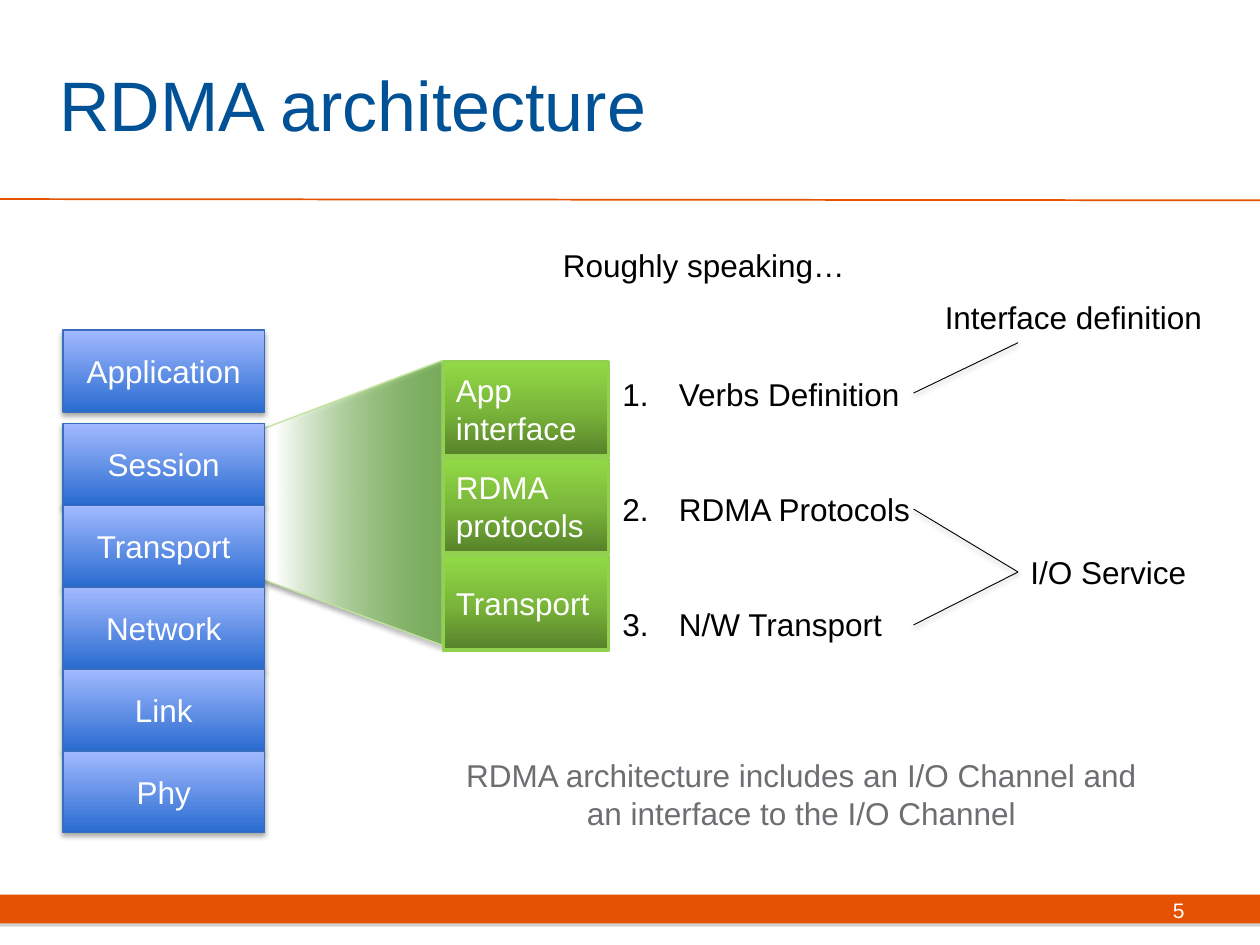
"""Build the RDMA architecture slide."""
from lxml.etree import SubElement
from pptx import Presentation
from pptx.dml.color import RGBColor
from pptx.enum.shapes import MSO_CONNECTOR, MSO_SHAPE
from pptx.enum.text import MSO_ANCHOR, PP_ALIGN
from pptx.oxml.ns import qn
from pptx.util import Inches, Pt

ORANGE = RGBColor(0xE5, 0x53, 0x02)
NAVY = RGBColor(0x00, 0x51, 0x95)
WHITE = RGBColor(0xFF, 0xFF, 0xFF)
BLACK = RGBColor(0x00, 0x00, 0x00)
GRAY = RGBColor(0x6D, 0x6E, 0x71)
SHADE = RGBColor(0x80, 0x80, 0x80)
BLUE_EDGE = RGBColor(0x38, 0x6C, 0xBC)
GREEN_EDGE = RGBColor(0x92, 0xD0, 0x50)
FAN_EDGE = RGBColor(0xC2, 0xE4, 0x9C)
BLUE_STOPS = [(0, RGBColor(0x29, 0x6B, 0xD0), 100), (100, RGBColor(0xA2, 0xBA, 0xFF), 100)]
GREEN_STOPS = [(0, RGBColor(0x57, 0x81, 0x2A), 100), (50, RGBColor(0x7B, 0xB7, 0x3B), 100),
               (100, RGBColor(0x92, 0xDA, 0x46), 100)]
FAN_STOPS = [(0, RGBColor(0x39, 0x94, 0x06), 57), (44, WHITE, 100)]

TITLE = "RDMA architecture"
TOP_LAYER = "Application"
LAYERS = ["Session", "Transport", "Network", "Link", "Phy"]
PARTS = ["App interface", "RDMA protocols", "Transport"]
ITEMS = ["Verbs Definition", "RDMA Protocols", "N/W Transport"]
LABELS = [
    ("Roughly speaking…", (4.37, 1.9, 2.46, 0.4), {}),
    ("Interface definition", (7.4, 2.32, 2.26, 0.4), {}),
    ("I/O Service", (8.08, 4.34, 1.64, 0.4), {}),
    ("RDMA architecture includes an I/O Channel and an interface to the I/O Channel",
     (3.52, 5.95, 5.68, 0.71), {"align": PP_ALIGN.CENTER, "color": GRAY}),
    ("5", (7.17, 7.02, 2.33, 0.4),
     {"align": PP_ALIGN.RIGHT, "color": WHITE, "size": 12, "anchor": MSO_ANCHOR.MIDDLE}),
]
LINKS = [((8.08, 2.72), (7.25, 3.12)), ((7.25, 4.04), (8.08, 4.54)), ((8.08, 4.54), (7.25, 4.96))]
LAYER_X, LAYER_Y, LAYER_W, LAYER_H = 0.5, 3.36, 1.6, 0.65
PART_X, PART_Y, PART_W, PART_H, PART_GAP = 3.52, 2.87, 1.31, 0.75, 0.02


def box(at):
    return [Inches(v) for v in at]


def write(shape, text, size=18, color=BLACK, align=PP_ALIGN.LEFT, anchor=MSO_ANCHOR.TOP,
          numbered=False, gap=0):
    tf = shape.text_frame
    tf.word_wrap = True
    tf.vertical_anchor = anchor
    for i, line in enumerate([text] if isinstance(text, str) else text):
        p = tf.add_paragraph() if i else tf.paragraphs[0]
        p.alignment = align
        if i:
            p.space_before = Pt(gap)
        if numbered:
            pPr = p._p.get_or_add_pPr()
            pPr.set("marL", str(Inches(0.45)))
            pPr.set("indent", str(-Inches(0.45)))
            SubElement(pPr, qn("a:buFont"), typeface="+mj-lt")
            SubElement(pPr, qn("a:buAutoNum"), type="arabicPeriod")
        r = p.add_run()
        r.text = line
        r.font.size, r.font.name, r.font.color.rgb = Pt(size), "Arial", color


def add_color(parent, color, alpha):
    clr = SubElement(parent, qn("a:srgbClr"), val=str(color))
    if alpha < 100:
        SubElement(clr, qn("a:alpha"), val=str(alpha * 1000))


def add_effects(shape, shade=None, alpha=35, blur=3.1, dist=1.8):
    effects = SubElement(shape._element.spPr, qn("a:effectLst"))
    if shade is not None:
        shadow = SubElement(effects, qn("a:outerShdw"), blurRad=str(Pt(blur)),
                            dist=str(Pt(dist)), dir="5400000", rotWithShape="0")
        add_color(shadow, shade, alpha)


def add_block(s, at, stops, edge, width, kind=MSO_SHAPE.RECTANGLE, shade=None):
    sp = s.shapes.add_shape(kind, *box(at))
    sp.fill.gradient()
    sp.fill.gradient_angle = 90
    gs_list = sp._element.spPr.find(qn("a:gradFill")).find(qn("a:gsLst"))
    for gs in list(gs_list):
        gs_list.remove(gs)
    for pos, color, alpha in stops:
        add_color(SubElement(gs_list, qn("a:gs"), pos=str(pos * 1000)), color, alpha)
    sp.line.color.rgb, sp.line.width = edge, Pt(width)
    add_effects(sp, shade)
    return sp


def add_line(s, start, end, color, width, **shadow):
    ln = s.shapes.add_connector(MSO_CONNECTOR.STRAIGHT, *box(start + end))
    ln.line.color.rgb, ln.line.width = color, Pt(width)
    add_effects(ln, **shadow)


def main():
    prs = Presentation()
    prs.slide_width, prs.slide_height = Inches(10), Inches(7.5)
    s = prs.slides.add_slide(prs.slide_layouts[5])

    title = s.shapes.title
    title.left, title.top, title.width, title.height = box((0.37, 0.2, 9.47, 1.25))
    write(title, TITLE, size=40, color=NAVY, anchor=MSO_ANCHOR.MIDDLE)

    bar = s.shapes.add_shape(MSO_SHAPE.RECTANGLE, *box((0, 7.1, 10, 0.23)))
    bar.fill.solid()
    bar.fill.fore_color.rgb = ORANGE
    bar.line.fill.background()
    add_effects(bar, SHADE, blur=0)
    add_line(s, (0, 1.58), (10, 1.59), ORANGE, 1)

    fan = add_block(s, (0.87, 2.48, 2.26, 3.02), FAN_STOPS, FAN_EDGE, 0.75,
                    kind=MSO_SHAPE.ISOSCELES_TRIANGLE, shade=BLACK)
    fan.adjustments[0] = 0.49
    fan.rotation = 270

    tops = [2.62] + [LAYER_Y + i * LAYER_H for i in range(len(LAYERS))]
    for name, top in zip([TOP_LAYER] + LAYERS, tops):
        sp = add_block(s, (LAYER_X, top, LAYER_W, LAYER_H), BLUE_STOPS, BLUE_EDGE, 0.75,
                       shade=BLACK)
        write(sp, name, color=WHITE, align=PP_ALIGN.CENTER, anchor=MSO_ANCHOR.MIDDLE)
    for i, name in enumerate(PARTS):
        sp = add_block(s, (PART_X, PART_Y + i * (PART_H + PART_GAP), PART_W, PART_H),
                       GREEN_STOPS, GREEN_EDGE, 2)
        write(sp, name, color=WHITE, anchor=MSO_ANCHOR.MIDDLE)

    write(s.shapes.add_textbox(*box((4.84, 2.93, 2.69, 2.22))), ITEMS, numbered=True, gap=44)
    for text, at, fmt in LABELS:
        write(s.shapes.add_textbox(*box(at)), text, **fmt)
    for start, end in LINKS:
        add_line(s, start, end, BLACK, 0.5, shade=BLACK, alpha=38, dist=1.6)
    prs.save("out.pptx")


if __name__ == "__main__":
    main()
